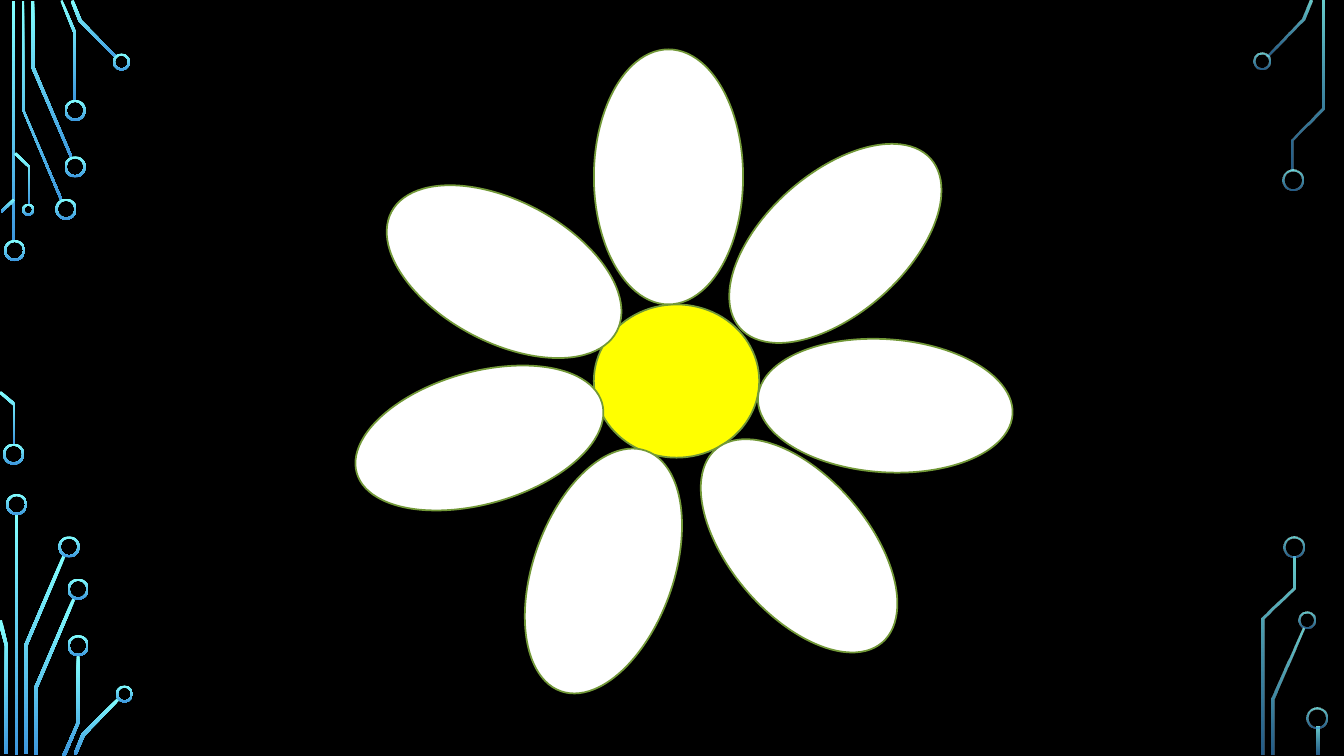
from pptx import Presentation
from pptx import util as u
from pptx.dml.color import RGBColor
from pptx.enum import shapes
from pptx.oxml.ns import qn
from lxml import etree

BLACK = RGBColor(0x00, 0x00, 0x00)
WHITE = RGBColor(0xFF, 0xFF, 0xFF)
YELLOW = RGBColor(0xFF, 0xFF, 0x00)
GREEN = RGBColor(0x72, 0x98, 0x38)
AQUA = RGBColor(0x82, 0xFF, 0xFF)
BLUE = RGBColor(0x3D, 0x97, 0xDE)

OPAQUE = (100, 100)
FADED = (80, 60)
RING_WIDTH = 0.02
PETAL_LENGTH = 2.53

# Straight tracks: left, top, width, height
LEFT_BARS = [(0.12, 0.01, 0.03, 2.39), (0.15, 5.1, 0.03, 2.39)]
RIGHT_BARS = [(13.06, 7.21, 0.03, 0.28)]

# Rings: left, top, diameter
LEFT_RINGS = [
    (0.04, 2.38, 0.21), (0.03, 4.4, 0.21), (0.55, 1.97, 0.21),
    (0.64, 1.55, 0.21), (0.64, 0.99, 0.21), (1.12, 0.53, 0.17),
    (0.22, 2.02, 0.12), (0.06, 4.9, 0.21), (0.58, 5.32, 0.21),
    (0.67, 5.74, 0.21), (0.67, 6.3, 0.21), (1.15, 6.8, 0.17),
]
RIGHT_RINGS = [
    (12.43, 0.52, 0.17), (12.72, 1.68, 0.21), (12.88, 6.07, 0.17),
    (12.73, 5.32, 0.21), (12.96, 7.02, 0.21),
]

# Bent tracks: outline points
LEFT_TRACKS = [
    [(0.6, 1.99), (0.22, 1.09), (0.22, 0.01), (0.24, 0.01), (0.24, 1.09), (0.62, 1.98)],
    [(0.7, 1.57), (0.31, 0.67), (0.31, 0.01), (0.34, 0.01), (0.34, 0.66), (0.72, 1.56)],
    [(0.76, 1), (0.73, 1), (0.73, 0.33), (0.6, 0.01), (0.62, 0), (0.76, 0.33)],
    [(1.15, 0.58), (0.78, 0.21), (0.7, 0.01), (0.73, 0), (0.81, 0.2), (1.16, 0.56)],
    [(0.02, 2.11), (0.01, 2.09), (0.13, 1.97), (0.15, 1.99)],
    [(0.15, 4.41), (0.13, 4.41), (0.13, 4.02), (-0.01, 3.9), (0.01, 3.88), (0.15, 4)],
    [(0.3, 2.03), (0.28, 2.03), (0.28, 1.66), (0.14, 1.53), (0.16, 1.51), (0.3, 1.65)],
    [(0.27, 7.48), (0.24, 7.48), (0.24, 6.4), (0.62, 5.51), (0.65, 5.52), (0.27, 6.41)],
    [(0.08, 7.48), (0.05, 7.48), (0.05, 6.41), (-0.02, 6.16), (0.02, 6.15), (0.08, 6.41)],
    [(0.37, 7.49), (0.34, 7.49), (0.34, 6.82), (0.72, 5.93), (0.75, 5.94), (0.37, 6.83)],
    [(0.65, 7.5), (0.62, 7.49), (0.76, 7.17), (0.76, 6.5), (0.79, 6.5), (0.79, 7.17)],
    [(0.76, 7.49), (0.73, 7.48), (0.81, 7.28), (1.17, 6.92), (1.19, 6.94), (0.84, 7.3)],
]
RIGHT_TRACKS = [
    [(12.58, 0.56), (12.56, 0.55), (12.91, 0.19), (12.99, 0), (13.02, 0.01), (12.94, 0.2)],
    [(12.64, 7.49), (12.61, 7.49), (12.61, 6.93), (12.92, 6.23), (12.94, 6.24), (12.64, 6.94)],
    [(12.83, 1.69), (12.81, 1.69), (12.81, 1.38), (13.11, 1.07), (13.11, 0.01),
     (13.14, 0.01), (13.14, 1.08), (12.83, 1.39)],
    [(12.54, 7.49), (12.51, 7.49), (12.51, 6.13), (12.82, 5.83), (12.82, 5.52),
     (12.85, 5.52), (12.85, 5.84), (12.54, 6.14)],
]

# Petals: left, top, width, rotation
PETALS = [
    (5.89, 0.49, 1.48, 0), (5.29, 4.4, 1.39, 19.5), (7.59, 1.15, 1.39, 48.4),
    (7.24, 4.15, 1.37, 139.3), (4.3, 1.43, 1.4, 298), (4.1, 3.08, 1.31, 254.1),
    (8.12, 2.76, 1.32, 93.9),
]


class Artist:
    def __init__(self, slide):
        self.s = slide

    def preset(self, kind, *box):
        sp = self.s.shapes.add_shape(kind, *map(u.Inches, box))
        sp.shadow.inherit = False
        return sp

    def glow(self, sp, opacity):
        """Fill with the downward circuit gradient; opacity is (top, bottom) in percent."""
        sp.shadow.inherit = False
        sp.line.fill.background()
        sp.fill.gradient()
        sp.fill.gradient_angle = 270
        for stop, color in zip(sp.fill.gradient_stops, (AQUA, BLUE)):
            stop.color.rgb = color
        if opacity != OPAQUE:
            for clr, percent in zip(sp._element.spPr.iter(qn("a:srgbClr")), opacity):
                etree.SubElement(clr, qn("a:alpha"), val=str(percent * 1000))

    def bar(self, box, opacity):
        self.glow(self.preset(shapes.MSO_SHAPE.RECTANGLE, *box), opacity)

    def ring(self, left, top, size, opacity):
        sp = self.preset(shapes.MSO_SHAPE.DONUT, left, top, size, size)
        sp.adjustments[0] = RING_WIDTH / size
        self.glow(sp, opacity)

    def track(self, points, opacity):
        start, *rest = [(u.Inches(x), u.Inches(y)) for x, y in points]
        fb = self.s.shapes.build_freeform(*start, scale=1.0)
        fb.add_line_segments(rest, close=True)
        self.glow(fb.convert_to_shape(), opacity)

    def flower_part(self, kind, box, color, rotation=0):
        sp = self.preset(kind, *box)
        sp.fill.solid()
        sp.fill.fore_color.rgb = color
        sp.line.color.rgb = GREEN
        for name, value in {"width": u.Pt(1.25)}.items():
            setattr(sp.line, name, value)
        sp.rotation = rotation

    def circuit(self, bars, rings, tracks, opacity):
        for box in bars:
            self.bar(box, opacity)
        for points in tracks:
            self.track(points, opacity)
        for ring in rings:
            self.ring(*ring, opacity)


def main():
    prs = Presentation()
    prs.slide_width, prs.slide_height = u.Inches(13.33), u.Inches(7.5)
    s = prs.slides.add_slide(prs.slide_layouts[6])
    s.background.fill.solid()
    s.background.fill.fore_color.rgb = BLACK

    artist = Artist(s)
    artist.circuit(LEFT_BARS, LEFT_RINGS, LEFT_TRACKS, OPAQUE)
    artist.circuit(RIGHT_BARS, RIGHT_RINGS, RIGHT_TRACKS, FADED)

    artist.flower_part(shapes.MSO_SHAPE.FLOWCHART_CONNECTOR, (5.89, 3.02, 1.64, 1.52), YELLOW)
    for left, top, width, rotation in PETALS:
        box = (left, top, width, PETAL_LENGTH)
        artist.flower_part(shapes.MSO_SHAPE.OVAL, box, WHITE, rotation)

    prs.save("out.pptx")


if __name__ == "__main__":
    main()
